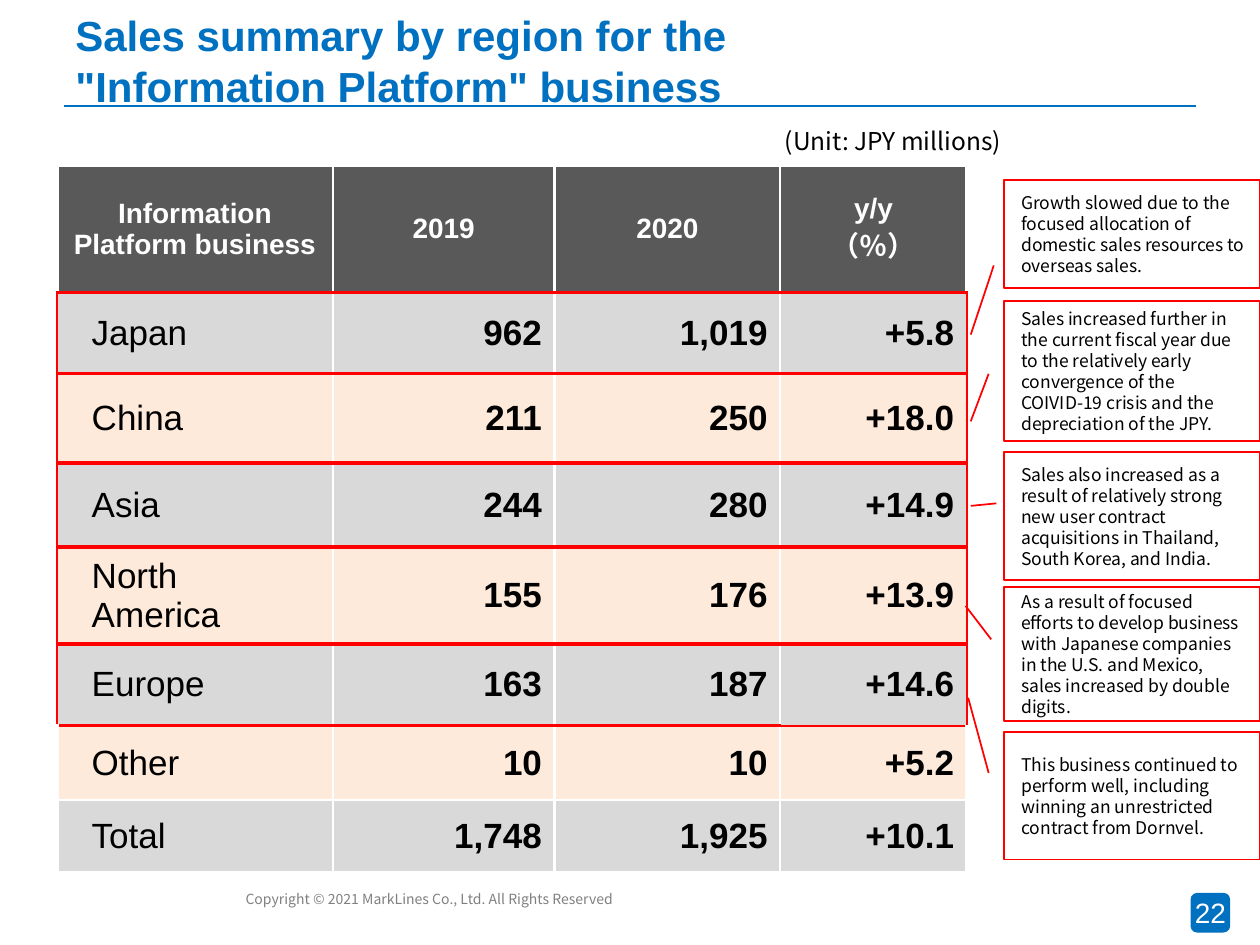
import lxml.etree
import pptx
import pptx.dml.color
import pptx.enum.shapes
import pptx.enum.text
import pptx.oxml.ns
import pptx.util
from pptx.util import Cm

ALIGN = pptx.enum.text.PP_ALIGN
MIDDLE = pptx.enum.text.MSO_ANCHOR.MIDDLE
SHAPE = pptx.enum.shapes.MSO_SHAPE
ARIAL, NOTO = "Arial", "Noto Sans CJK JP"
BLUE, RED, WHITE, BLACK = "0070C0", "FF0000", "FFFFFF", "000000"

COLUMN_WIDTHS = [5.56, 4.47, 4.55, 3.76]
ROW_HEIGHTS = [2.57, 1.63, 1.8, 1.7, 1.7, 1.65, 1.5, 1.47]
SALES = [
    ["Information Platform business", "2019", "2020", "y/y\n（％）"],
    ["Japan", "962", "1,019", "+5.8"],
    ["China", "211", "250", "+18.0"],
    ["Asia", "244", "280", "+14.9"],
    ["North America", "155", "176", "+13.9"],
    ["Europe", "163", "187", "+14.6"],
    ["Other", "10", "10", "+5.2"],
    ["Total", "1,748", "1,925", "+10.1"],
]
LAST_COLUMN = len(COLUMN_WIDTHS) - 1
LAST_RED_ROW = 5
ROW_EDGES = [(WHITE, 2.25)] + [(RED, 2.25)] * 6 + [(WHITE, 1.5), (WHITE, 2.25)]

# Top, height, callout adjustments, text
CALLOUTS = [
    (3.63, 2.18, (0.79, -0.04, 1.43, -0.13),
     "Growth slowed due to the focused allocation of domestic sales resources to overseas sales."),
    (6.07, 2.82, (0.52, -0.06, 0.86, -0.13),
     "Sales increased further in the current fiscal year due to the relatively early convergence "
     "of the COIVID-19 crisis and the depreciation of the JPY."),
    (9.12, 2.57, (0.4, -0.03, 0.42, -0.13),
     "Sales also increased as a result of relatively strong new user contract acquisitions in "
     "Thailand, South Korea, and India."),
    (11.84, 2.69, (0.39, -0.05, 0.14, -0.15),
     "As a result of focused efforts to develop business with Japanese companies in the U.S. and "
     "Mexico, sales increased by double digits."),
    (14.76, 2.57, (0.32, -0.06, -0.27, -0.14),
     "This business continued to perform well, including winning an unrestricted contract from "
     "Dornvel."),
]


def color(value):
    return pptx.dml.color.RGBColor.from_string(value)


def paint(fill, value):
    fill.solid()
    fill.fore_color.rgb = color(value)


def write(text_frame, text, size, font_name, font_color, bold=False, align=ALIGN.LEFT):
    text_frame.text = text
    for paragraph in text_frame.paragraphs:
        paragraph.alignment = align
        for run in paragraph.runs:
            run.font.size = pptx.util.Pt(size)
            run.font.name = font_name
            run.font.bold = bold
            run.font.color.rgb = color(font_color)


def add_text(slide, box, text, size, font_name, font_color, bold=False):
    text_frame = slide.shapes.add_textbox(*map(Cm, box)).text_frame
    text_frame.word_wrap = True
    write(text_frame, text, size, font_name, font_color, bold)
    return text_frame


def add_title_rule(slide):
    rule = slide.shapes.add_connector(
        pptx.enum.shapes.MSO_CONNECTOR.STRAIGHT, Cm(1.3), Cm(2.13), Cm(24.1), Cm(2.13))
    rule.line.color.rgb = color(BLUE)
    rule.line.width = pptx.util.Pt(1)
    lxml.etree.SubElement(rule.element.spPr, pptx.oxml.ns.qn("a:effectLst"))


def add_page_number(slide):
    badge = slide.shapes.add_shape(
        SHAPE.ROUNDED_RECTANGLE, Cm(24), Cm(18), Cm(0.8), Cm(0.8))
    badge.shadow.inherit = False
    paint(badge.fill, BLUE)
    badge.line.fill.background()
    badge.text_frame.word_wrap = False
    badge.text_frame.vertical_anchor = MIDDLE
    write(badge.text_frame, "22", 16, ARIAL, WHITE, align=ALIGN.CENTER)


def set_borders(cell, borders):
    """Draw borders given as {side: (colour, points)}, sides in the order L, R, T, B."""
    properties = cell._tc.get_or_add_tcPr()
    for index, (side, (value, points)) in enumerate(borders.items()):
        line = lxml.etree.Element(pptx.oxml.ns.qn(f"a:ln{side}"), w=str(pptx.util.Pt(points)))
        fill = lxml.etree.SubElement(line, pptx.oxml.ns.qn("a:solidFill"))
        lxml.etree.SubElement(fill, pptx.oxml.ns.qn("a:srgbClr"), val=value)
        properties.insert(index, line)


def cell_borders(row, column):
    inner = (WHITE, 1.5)
    outer = (RED, 1.5) if 1 <= row <= LAST_RED_ROW else (WHITE, 2.25)
    top, bottom = ROW_EDGES[row:row + 2]
    if column == LAST_COLUMN:
        if row == LAST_RED_ROW:
            bottom = (RED, 1.5)
        elif row == LAST_RED_ROW + 1:
            top = (RED, 1.5)
    return {"L": outer if column == 0 else inner,
            "R": outer if column == LAST_COLUMN else inner,
            "T": top, "B": bottom}


def fill_cell(cell, row, column, text):
    cell.vertical_anchor = MIDDLE
    if row == 0:
        paint(cell.fill, "595959")
        write(cell.text_frame, text, 16, ARIAL, WHITE, True, ALIGN.CENTER)
    else:
        paint(cell.fill, "D9D9D9" if row % 2 else "FDEADA")
        is_region = column == 0
        if is_region:
            cell.margin_left = cell.margin_right = Cm(0.7)
        write(cell.text_frame, text, 20, ARIAL, BLACK, not is_region,
              ALIGN.LEFT if is_region else ALIGN.RIGHT)
    set_borders(cell, cell_borders(row, column))


def add_sales_table(slide):
    table = slide.shapes.add_table(
        len(SALES), len(COLUMN_WIDTHS), Cm(1.15), Cm(3.33),
        Cm(sum(COLUMN_WIDTHS)), Cm(sum(ROW_HEIGHTS))).table
    for column, width in zip(table.columns, COLUMN_WIDTHS):
        column.width = Cm(width)
    for row, height in zip(table.rows, ROW_HEIGHTS):
        row.height = Cm(height)
    for row, texts in enumerate(SALES):
        for column, text in enumerate(texts):
            fill_cell(table.cell(row, column), row, column, text)


def add_callout(slide, top, height, adjustments, text):
    callout = slide.shapes.add_shape(
        SHAPE.LINE_CALLOUT_1, Cm(20.24), Cm(top), Cm(5.16), Cm(height))
    callout.shadow.inherit = False
    for index, adjustment in enumerate(adjustments):
        callout.adjustments[index] = adjustment
    callout.fill.background()
    callout.line.color.rgb = color(RED)
    callout.line.width = pptx.util.Pt(1)
    text_frame = callout.text_frame
    text_frame.word_wrap = True
    text_frame.vertical_anchor = MIDDLE
    write(text_frame, text, 10, NOTO, BLACK)
    paragraph = text_frame.paragraphs[0]
    paragraph.line_spacing = pptx.util.Pt(12)
    paragraph._p.get_or_add_pPr().set("marL", str(Cm(0.1)))


def main():
    presentation = pptx.Presentation()
    presentation.slide_width, presentation.slide_height = Cm(25.4), Cm(19.05)
    slide = presentation.slides.add_slide(presentation.slide_layouts[6])
    add_text(slide, (4.7, 17.83, 9.6, 0.6),
             "Copyright © 2021 MarkLines Co., Ltd. All Rights Reserved", 8, NOTO, "808080")
    add_title_rule(slide)
    title = add_text(slide, (1.27, 0.53, 17.83, 1.37),
                     'Sales summary by region for the "Information Platform" business',
                     24, ARIAL, BLUE, True)
    title.vertical_anchor = MIDDLE
    add_page_number(slide)
    add_text(slide, (15.57, 2.41, 6.73, 0.86), "(Unit: JPY millions)", 14, NOTO, BLACK)
    add_sales_table(slide)
    for callout in CALLOUTS:
        add_callout(slide, *callout)
    presentation.save("out.pptx")


if __name__ == "__main__":
    main()
